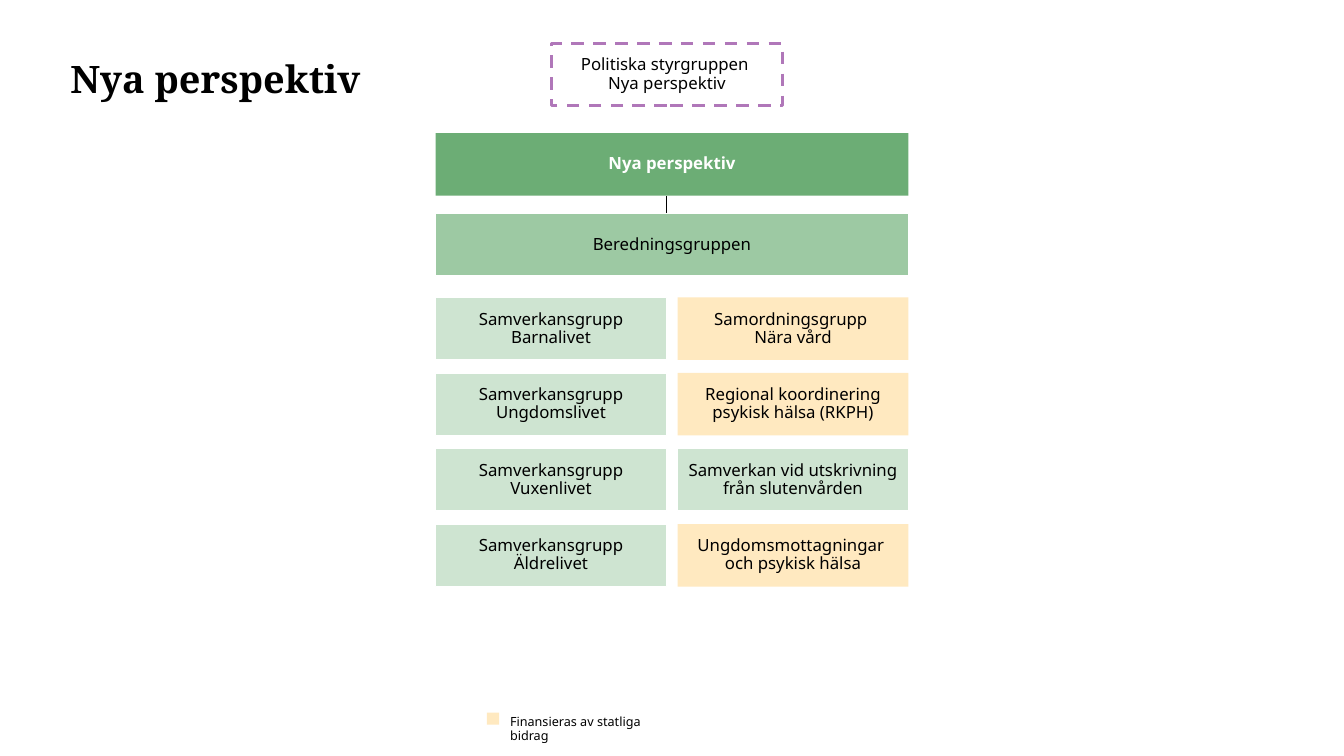
import pptx
import pptx.util
import pptx.dml.color
import pptx.enum.dml
import pptx.enum.shapes
import pptx.enum.text
from pptx.oxml.ns import qn
from lxml import etree

PX = 9144  # 100 px to the inch
COLORS = {
    "black": "000000", "white": "FFFFFF", "strong": "6CAD75", "medium": "9DC9A3",
    "light": "CEE4D1", "funded": "FFE9C0", "purple": "B077B9",
}
SANS, SERIF = "Noto Sans", "Noto Serif"
ALIGN = pptx.enum.text.PP_ALIGN
ANCHOR = pptx.enum.text.MSO_ANCHOR
BOX_W, BOX_H = 229, 62

# Rows of (text, fill) for the left and right columns
GROUPS = [
    [("Samverkansgrupp\vBarnalivet", "light"), ("Samordningsgrupp \vNära vård", "funded")],
    [("Samverkansgrupp\vUngdomslivet", "light"),
     ("Regional koordinering psykisk hälsa (RKPH)", "funded")],
    [("Samverkansgrupp\vVuxenlivet", "light"),
     ("Samverkan vid utskrivning från slutenvården", "light")],
    [("Samverkansgrupp\vÄldrelivet", "light"),
     ("Ungdomsmottagningar \voch psykisk hälsa", "funded")],
]


def px(*values):
    return [pptx.util.Emu(v * PX) for v in values]


def rgb(name):
    return pptx.dml.color.RGBColor.from_string(COLORS[name])


def write(tf, text, size, font=SANS, color="black", bold=False, align=ALIGN.LEFT):
    tf.word_wrap = True
    p = tf.paragraphs[0]
    p.text = text
    p.alignment = align
    p.line_spacing = 0.9
    for key, value in {"name": font, "size": pptx.util.Pt(size), "bold": bold}.items():
        setattr(p.font, key, value)
    p.font.color.rgb = rgb(color)
    for r in p.runs:
        for key, value in {"name": font, "size": pptx.util.Pt(size), "bold": bold}.items():
            setattr(r.font, key, value)
        r.font.color.rgb = rgb(color)


def add_text(s, box, text, size, **style):
    write(s.shapes.add_textbox(*px(*box)).text_frame, text, size, **style)


def add_box(s, box, fill, line=None, width=1):
    sp = s.shapes.add_shape(pptx.enum.shapes.MSO_SHAPE.RECTANGLE, *px(*box))
    sp.shadow.inherit = False
    sp.fill.solid()
    sp.fill.fore_color.rgb = rgb(fill)
    if line:
        sp.line.color.rgb = rgb(line)
        sp.line.width = pptx.util.Pt(width)
    else:
        sp.line.fill.background()
    return sp


def add_group(s, box, text, fill, line=None, width=1, **style):
    """Draw one labelled box of the organisation chart."""
    sp = add_box(s, box, fill, line, width)
    tf = sp.text_frame
    for side in ("left", "top", "right", "bottom"):
        setattr(tf, f"margin_{side}", px(1)[0])
    tf.vertical_anchor = ANCHOR.MIDDLE
    write(tf, text, 12, align=ALIGN.CENTER, **style)
    return sp


def add_steering_group(s, box):
    sp = add_group(s, box, "Politiska styrgruppen \vNya perspektiv", "white", "purple", 2.25)
    sp.line.dash_style = pptx.enum.dml.MSO_LINE.DASH


def add_leadership(s, x, y, w):
    """Draw the two wide boxes and the line between them."""
    pitch = 80
    line_x, line_y = x + BOX_W, y + BOX_H
    c = s.shapes.add_connector(pptx.enum.shapes.MSO_CONNECTOR.STRAIGHT,
                               *px(line_x, line_y, line_x, y + pitch))
    c.line.color.rgb = rgb("black")
    c.line.width = pptx.util.Pt(1)
    etree.SubElement(c._element.spPr, qn("a:effectLst"))
    add_group(s, (x, y + pitch, w, BOX_H), "Beredningsgruppen", "medium", "white")
    add_group(s, (x, y, w, BOX_H), "Nya perspektiv", "strong", color="white", bold=True)


def add_group_grid(s, x, y, w):
    row_pitch, column_pitch = 75, w - BOX_W
    for row, groups in enumerate(GROUPS):
        for column, (text, fill) in enumerate(groups):
            box = (x + column * column_pitch, y + row * row_pitch, BOX_W, BOX_H)
            add_group(s, box, text, fill, "white" if fill == "light" else None)


def add_legend(s, x, y):
    add_box(s, (x, y + 2, 12, 12), "funded")
    add_text(s, (x + 13, y, 189, 37), "Finansieras av statliga bidrag", 9)


def main():
    prs = pptx.Presentation()
    prs.slide_width, prs.slide_height = px(1333, 750)
    s = prs.slides.add_slide(prs.slide_layouts[6])
    add_text(s, (60, 55, 400, 92), "Nya perspektiv", 27, font=SERIF, bold=True)
    add_steering_group(s, (547, 43, BOX_W, BOX_H))
    add_leadership(s, 432, 132, 469)
    add_group_grid(s, 432, 295, 469)
    add_legend(s, 483, 705)
    prs.save("out.pptx")


if __name__ == "__main__":
    main()
